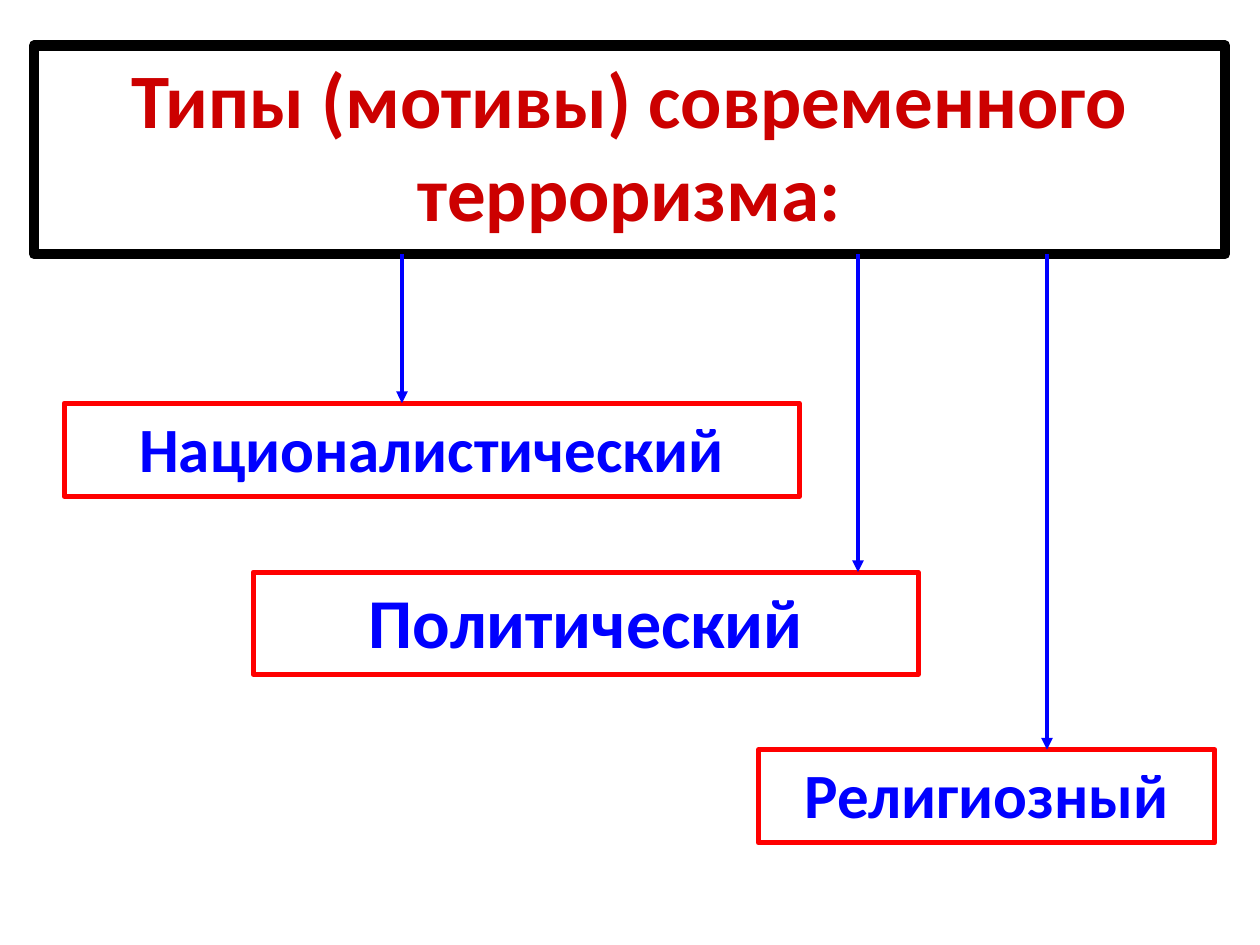
from lxml.etree import SubElement
from pptx import Presentation
from pptx.dml.color import RGBColor
from pptx.enum.shapes import MSO_CONNECTOR as CONN
from pptx.enum.text import MSO_ANCHOR as ANCHOR, PP_ALIGN as ALIGN
from pptx.oxml.ns import qn
from pptx.util import Pt

COLORS = {"title": "CC0000", "frame": "000000", "border": "FF0000", "type": "0000FF"}
TITLE_BOX = (19.5, 26, 680.5, 119.2)
TYPES = [
    ("Националистический", (36.7, 230.4, 420, 53.3), 36, 229.7),
    ("Политический", (144.7, 327, 380, 58.3), 40, 490.3),
    ("Религиозный", (433.5, 428.4, 260.6, 53.3), 36, 598.3),
]


def rgb(name):
    """Return the named palette colour."""
    return RGBColor.from_string(COLORS[name])


def add_frame(s, text, box, size, color, border, weight):
    """Place bold centred text in an outlined box."""
    sp = s.shapes.add_textbox(*map(Pt, box))
    sp.line.color.rgb = rgb(border)
    sp.line.width = Pt(weight)
    tf = sp.text_frame
    for name, value in {"word_wrap": True, "vertical_anchor": ANCHOR.TOP}.items():
        setattr(tf, name, value)
    p = tf.paragraphs[0]
    p.alignment = ALIGN.CENTER
    r = p.add_run()
    r.text = text
    for name, value in {"name": "Calibri", "size": Pt(size), "bold": True}.items():
        setattr(r.font, name, value)
    r.font.color.rgb = rgb(color)


def add_arrow(s, x, top, bottom):
    """Draw a vertical arrow pointing down to a type."""
    sp = s.shapes.add_connector(CONN.STRAIGHT, Pt(x), Pt(top), Pt(x), Pt(bottom))
    sp.line.color.rgb = rgb("type")
    sp.line.width = Pt(2.25)
    SubElement(sp.line._get_or_add_ln(), qn("a:tailEnd"), type="triangle")
    SubElement(sp._element.spPr, qn("a:effectLst"))


def add_types_slide(prs):
    """Build the title with arrows leading to each type."""
    s = prs.slides.add_slide(prs.slide_layouts[6])
    add_frame(s, "Типы (мотивы) современного терроризма:", TITLE_BOX, 44, "title", "frame", 6)
    title_bottom = TITLE_BOX[1] + TITLE_BOX[3]
    for text, box, size, arrow_x in TYPES:
        add_frame(s, text, box, size, "type", "border", 3)
        add_arrow(s, arrow_x, title_bottom, box[1])


def main():
    """Create and save the presentation."""
    prs = Presentation()
    prs.slide_width, prs.slide_height = Pt(720), Pt(540)
    add_types_slide(prs)
    prs.save("out.pptx")


if __name__ == "__main__":
    main()
